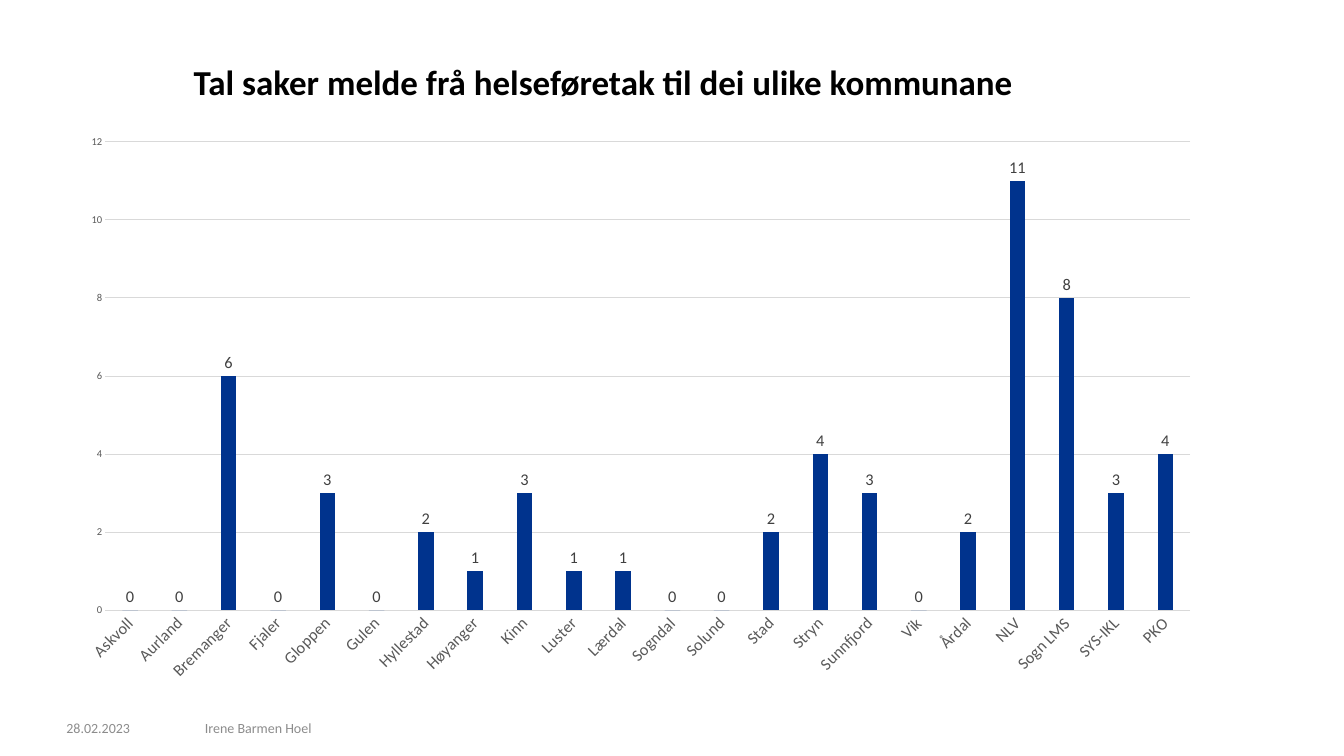
"""Build a slide with a column chart of reported cases per municipality."""
from pptx import Presentation
from pptx.chart.data import CategoryChartData
from pptx.dml.color import RGBColor
from pptx.enum.chart import XL_CHART_TYPE, XL_LABEL_POSITION, XL_TICK_MARK
from pptx.enum.text import MSO_ANCHOR, PP_ALIGN
from pptx.util import Inches, Pt

COLUMNS = XL_CHART_TYPE.COLUMN_CLUSTERED
OUTSIDE = XL_LABEL_POSITION.OUTSIDE_END
NO_TICK = XL_TICK_MARK.NONE
TOP, MIDDLE = MSO_ANCHOR.TOP, MSO_ANCHOR.MIDDLE
LEFT, CENTER = PP_ALIGN.LEFT, PP_ALIGN.CENTER
FONT = "Calibri"
TITLE_ONLY = 5
MARGIN = 0.79
COLORS = {"title": "000000", "footer": "8C8C8C", "axis": "595959",
          "label": "404040", "grid": "D9D9D9", "bar": "00338D"}
CASES = {
    "Askvoll": 0, "Aurland": 0, "Bremanger": 6, "Fjaler": 0, "Gloppen": 3,
    "Gulen": 0, "Hyllestad": 2, "Høyanger": 1, "Kinn": 3, "Luster": 1,
    "Lærdal": 1, "Sogndal": 0, "Solund": 0, "Stad": 2, "Stryn": 4,
    "Sunnfjord": 3, "Vik": 0, "Årdal": 2, "NLV": 11, "Sogn LMS": 8,
    "SYS-IKL": 3, "PKO": 4,
}


def style_font(font, size, color, bold=False):
    font.name = FONT
    font.size = Pt(size)
    font.bold = bold
    font.color.rgb = RGBColor.from_string(COLORS[color])


def fill_box(box, area, text, size, color, anchor, align, bold=False):
    box.left, box.top, box.width, box.height = [Inches(length) for length in area]
    frame = box.text_frame
    frame.text = text
    frame.word_wrap = True
    frame.vertical_anchor = anchor
    frame.margin_left = frame.margin_right = 0
    frame.margin_top = frame.margin_bottom = 0
    para = frame.paragraphs[0]
    para.alignment = align
    style_font(para.runs[0].font, size, color, bold)
    return para


deck = Presentation()
deck.slide_width, deck.slide_height = Inches(16), Inches(9)
page = deck.slides.add_slide(deck.slide_layouts[TITLE_ONLY])

title = fill_box(page.shapes.title, (MARGIN, 0.77, 12.79, 0.52),
                 "Tal saker melde frå helseføretak til dei ulike kommunane",
                 30, "title", TOP, CENTER, bold=True)
title.line_spacing = Pt(32)

for left, width, text in ((MARGIN, 1.26, "28.02.2023"),
                          (2.44, 9.77, "Irene Barmen Hoel")):
    footer = page.shapes.add_textbox(0, 0, 0, 0)
    fill_box(footer, (left, 8.54, width, 0.24), text, 12, "footer", MIDDLE, LEFT)

data = CategoryChartData()
data.categories = list(CASES)
data.add_series("Series 1", list(CASES.values()))
chart = page.shapes.add_chart(COLUMNS, Inches(MARGIN), Inches(1.48),
                              Inches(13.65), Inches(6.76), data).chart
chart.has_title = False
chart.has_legend = False
style_font(chart.font, 10, "title")

plot = chart.plots[0]
plot.gap_width = 219
plot.overlap = -27
plot.vary_by_categories = False
bars = plot.series[0]
bars.format.fill.solid()
bars.format.fill.fore_color.rgb = RGBColor.from_string(COLORS["bar"])
labels = bars.data_labels
labels.show_value = True
labels.position = OUTSIDE
style_font(labels.font, 14, "label")

places, counts = chart.category_axis, chart.value_axis
for axis, size in ((places, 14), (counts, 9)):
    axis.major_tick_mark = axis.minor_tick_mark = NO_TICK
    style_font(axis.tick_labels.font, size, "axis")
places.has_major_gridlines = False
places._element.txPr.bodyPr.set("rot", "-2700000")
counts.minimum_scale, counts.maximum_scale, counts.major_unit = 0, 12, 2
counts.has_major_gridlines = True
counts.format.line.fill.background()
for line in (places.format.line, counts.major_gridlines.format.line):
    line.color.rgb = RGBColor.from_string(COLORS["grid"])
    line.width = Pt(0.75)

deck.save("out.pptx")
